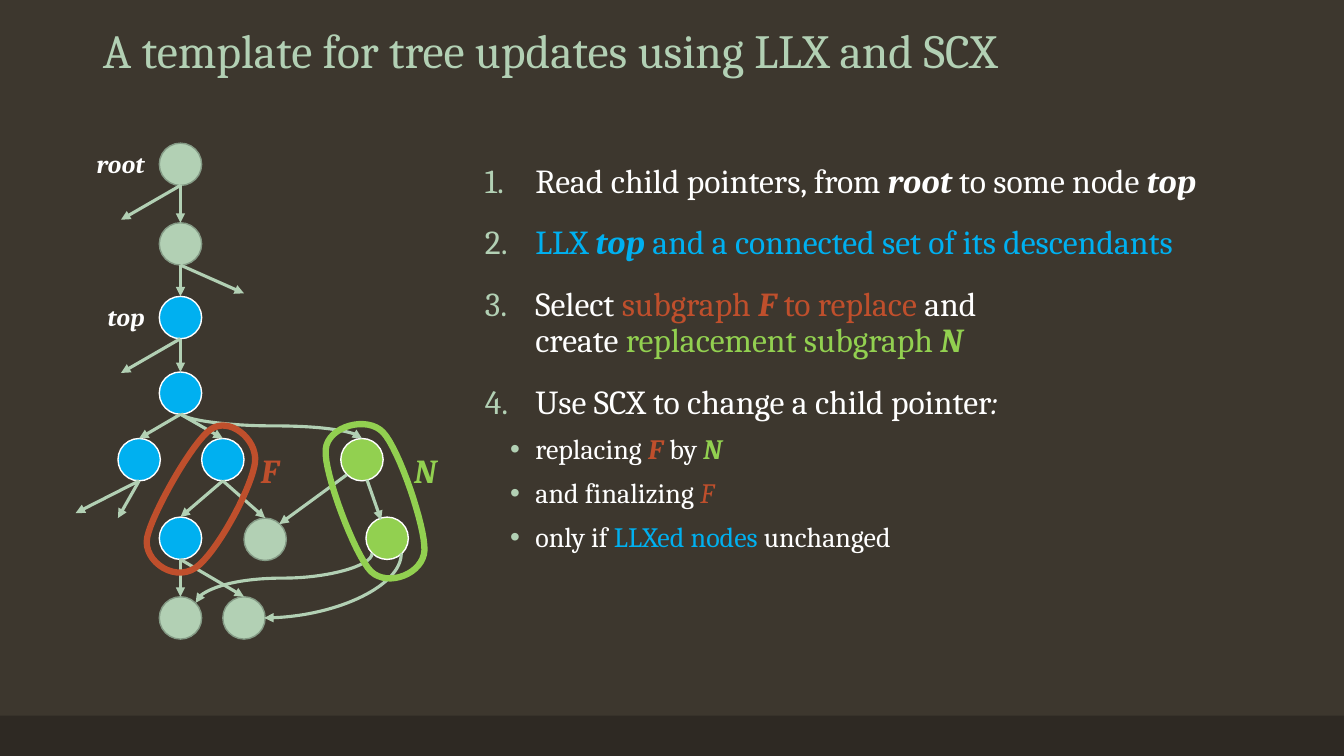
"""Build the slide on tree updates with LLX and SCX."""
from lxml.etree import SubElement as Sub
from pptx import Presentation
from pptx.dml.color import RGBColor as RGB
from pptx.enum.shapes import MSO_CONNECTOR as Link, MSO_SHAPE as Kind
from pptx.enum.text import MSO_ANCHOR as Anchor, MSO_AUTO_SIZE as Fit, PP_ALIGN as Align
from pptx.oxml.ns import qn
from pptx.util import Inches, Pt

BROWN = RGB(0x3D, 0x37, 0x2E)
DARK = RGB(0x2E, 0x29, 0x23)
SAGE = RGB(0xB2, 0xD0, 0xB4)
MOSS = RGB(0x84, 0x9A, 0x85)
WHITE = RGB(0xFF, 0xFF, 0xFF)
BLUE = RGB(0x00, 0xB0, 0xF0)
RUST = RGB(0xBF, 0x4F, 0x2C)
GREEN = RGB(0x92, 0xD0, 0x50)
FONT = "Cambria"
SIZE = 0.42

NODES = {
    "root": (1.79, 1.42, SAGE),
    "inner": (1.79, 2.21, SAGE),
    "top": (1.79, 2.94, BLUE),
    "parent": (1.79, 3.69, BLUE),
    "left": (1.38, 4.35, BLUE),
    "right": (2.21, 4.35, BLUE),
    "low": (1.79, 5.13, BLUE),
    "side": (2.63, 5.14, SAGE),
    "leaf one": (1.79, 5.92, SAGE),
    "leaf two": (2.42, 5.92, SAGE),
    "new": (3.59, 4.35, GREEN),
    "new low": (3.84, 5.13, GREEN),
}
EDGES = [
    ("root", "inner"), ("inner", "top"), ("top", "parent"),
    ("parent", "left"), ("parent", "right"), ("right", "low"),
    ("right", "side"), ("low", "leaf one"), ("low", "leaf two"),
]
STUBS = [
    ("root", 1.2, 2.18), ("inner", 2.42, 2.91), ("top", 1.2, 3.7),
    ("left", 1.17, 5.14), ("left", 0.75, 5.09),
]
CROSS = [(3.64, 4.76, 3.78, 5.16), (3.44, 4.71, 2.77, 5.2)]
BENDS = [
    ((2.57, 4.86, 0.49, 1.75), 90, False, "curvedConnector3"),
    ((2.98, 5.13, 0.64, 1.36), 90, False, "curvedConnector2"),
    ((2.57, 3.33, 0.25, 1.79), 270, True, "curvedConnector3"),
]
LOOP_F = [
    (2.53, 4.58), (2.55, 4.35), (2.27, 4.13), (2.09, 4.26),
    (1.91, 4.38), (1.51, 5.09), (1.46, 5.33),
    (1.41, 5.57), (1.76, 5.81), (1.98, 5.6),
    (2.2, 5.4), (2.51, 4.8), (2.53, 4.58),
]
LOOP_N = [
    (3.23, 4.46), (3.25, 4.23), (3.64, 4.12), (3.8, 4.29),
    (3.96, 4.46), (4.22, 5.23), (4.21, 5.46),
    (4.2, 5.69), (3.85, 5.83), (3.68, 5.67),
    (3.52, 5.51), (3.21, 4.69), (3.23, 4.46),
]
LABELS = [
    ("root", 0.86, 1.42, 0.73, 0.4, 18, WHITE),
    ("top", 0.97, 2.94, 0.61, 0.4, 18, WHITE),
    ("F", 2.49, 4.41, 0.44, 0.5, 24, RUST),
    ("N", 4.01, 4.41, 0.49, 0.5, 24, GREEN),
]
STEPS = [
    [("Read child pointers, from ", WHITE, ""), ("root", WHITE, "bi"),
     (" to some node ", WHITE, ""), ("top", WHITE, "bi")],
    [("LLX ", BLUE, ""), ("top", BLUE, "bi"),
     (" and a connected set of its descendants", BLUE, "")],
    [("Select ", WHITE, ""), ("subgraph ", RUST, ""), ("F", RUST, "bi"),
     (" to replace ", RUST, ""), ("and", WHITE, ""), None, ("create ", WHITE, ""),
     ("replacement subgraph ", GREEN, ""), ("N", GREEN, "bi")],
    [("Use SCX to change a child pointer", WHITE, ""), (":", WHITE, "i")],
]
PARTS = [
    [("replacing ", WHITE, ""), ("F", RUST, "bi"), (" by ", WHITE, ""), ("N", GREEN, "bi")],
    [("and finalizing ", WHITE, ""), ("F", RUST, "i")],
    [("only if ", WHITE, ""), ("LLXed nodes", BLUE, ""), (" unchanged", WHITE, "")],
]


def place(shape, *box):
    """Move and size a shape."""
    shape.left, shape.top, shape.width, shape.height = map(Inches, box)


def write(para, runs, size):
    """Add runs of (text, colour, style); None breaks the line."""
    for item in runs:
        if item is None:
            para.add_line_break()
            continue
        run = para.add_run()
        run.text, color, style = item
        font = run.font
        font.name, font.size = FONT, Pt(size)
        font.bold, font.italic = "b" in style, "i" in style
        font.color.rgb = color


def mark(para, hang, face, tag, **attrs):
    """Give a paragraph its bullet or number."""
    props = para._p.get_or_add_pPr()
    props.set("marL", str(Inches(0.5)))
    props.set("indent", str(-Inches(hang)))
    Sub(Sub(props, qn("a:buClr")), qn("a:srgbClr"), val=str(SAGE))
    Sub(props, qn("a:buFont"), typeface=face)
    Sub(props, qn(tag), **attrs)


def fill_list(frame):
    """Write the numbered steps and their bullets."""
    frame.word_wrap, frame.auto_size = True, Fit.NONE
    rows = [(0, runs) for runs in STEPS] + [(1, runs) for runs in PARTS]
    for i, (level, runs) in enumerate(rows):
        para = frame.add_paragraph() if i else frame.paragraphs[0]
        para.level, para.line_spacing = level, 0.9
        para.space_before, para.space_after = Pt(10 if level else 18), Pt(0)
        if level:
            mark(para, 0.25, "Arial", "a:buChar", char="•")
        else:
            mark(para, 0.5, FONT, "a:buAutoNum", type="arabicPeriod")
        write(para, runs, 20 if level else 24)


def add_node(shapes, mid, top, color):
    """Draw one tree node."""
    node = shapes.add_shape(Kind.OVAL, Inches(mid - SIZE / 2), Inches(top),
                            Inches(SIZE), Inches(SIZE))
    node.shadow.inherit = False
    node.fill.solid()
    node.fill.fore_color.rgb = color
    node.line.color.rgb = MOSS if color == SAGE else WHITE
    node.line.width = Pt(1)
    return node


def add_arrow(shapes, *ends, kind=Link.STRAIGHT):
    """Draw a pointer between two points."""
    wire = shapes.add_connector(kind, *map(Inches, ends))
    wire.line.color.rgb, wire.line.width = SAGE, Pt(2.25)
    props = wire._element.spPr
    Sub(props.find(qn("a:ln")), qn("a:tailEnd"), type="triangle")
    Sub(props, qn("a:effectLst"))
    return wire


def add_bend(shapes, box, turn, flip, preset):
    """Draw a curved pointer, turned inside its box."""
    x, y, wide, high = box
    wire = add_arrow(shapes, x, y, x + wide, y + high, kind=Link.CURVE)
    props = wire._element.spPr
    props.find(qn("a:prstGeom")).set("prst", preset)
    frame = props.find(qn("a:xfrm"))
    frame.set("rot", str(turn * 60000))
    if flip:
        frame.set("flipH", "1")


def add_loop(shapes, knots, color, steps=16):
    """Draw a closed outline through cubic curves."""
    dots = []
    for i in range(0, len(knots) - 1, 3):
        for k in range(steps):
            t = k / steps
            parts = ((1 - t) ** 3, 3 * t * (1 - t) ** 2, 3 * t * t * (1 - t), t ** 3)
            dots.append([Inches(sum(w * p[axis] for w, p in zip(parts, knots[i:i + 4])))
                         for axis in (0, 1)])
    pen = shapes.build_freeform(*dots[0])
    pen.add_line_segments(dots[1:], close=True)
    loop = pen.convert_to_shape()
    loop.shadow.inherit = False
    loop.fill.background()
    loop.line.color.rgb, loop.line.width = color, Pt(4.5)


def add_label(shapes, text, x, y, wide, high, size, color):
    """Name a node or a subgraph."""
    frame = shapes.add_textbox(*map(Inches, (x, y, wide, high))).text_frame
    frame.word_wrap, frame.auto_size = False, Fit.SHAPE_TO_FIT_TEXT
    write(frame.paragraphs[0], [(text, color, "bi")], size)


def add_tree(shapes):
    """Draw the tree with its pointers, outlines and labels."""
    nodes = {name: add_node(shapes, *data) for name, data in NODES.items()}
    for start, end in EDGES:
        (x, y, _), (to_x, to_y, _) = NODES[start], NODES[end]
        add_arrow(shapes, x, y + SIZE, to_x, to_y).end_connect(nodes[end], 0)
    for start, to_x, to_y in STUBS:
        x, y, _ = NODES[start]
        add_arrow(shapes, x, y + SIZE, to_x, to_y)
    for ends in CROSS:
        add_arrow(shapes, *ends)
    for bend in BENDS:
        add_bend(shapes, *bend)
    add_loop(shapes, LOOP_F, RUST)
    add_loop(shapes, LOOP_N, GREEN)
    for label in LABELS:
        add_label(shapes, *label)


def main():
    """Build and save the slide."""
    deck = Presentation()
    deck.slide_width, deck.slide_height = Inches(13.33), Inches(7.5)
    slide = deck.slides.add_slide(deck.slide_layouts[1])
    slide.background.fill.solid()
    slide.background.fill.fore_color.rgb = BROWN
    shapes = slide.shapes
    band = shapes.add_shape(Kind.RECTANGLE, *map(Inches, (0, 7.1, 13.33, 0.4)))
    band.shadow.inherit = False
    band.fill.solid()
    band.fill.fore_color.rgb = DARK
    band.line.fill.background()
    title, body = slide.placeholders
    place(title, 0.92, 0.06, 11.5, 0.77)
    place(body, 4.71, 1.58, 8.21, 4.76)
    frame = title.text_frame
    frame.vertical_anchor, frame.auto_size = Anchor.BOTTOM, Fit.NONE
    para = frame.paragraphs[0]
    para.alignment, para.line_spacing = Align.LEFT, 0.9
    write(para, [("A template for tree updates using LLX and SCX", SAGE, "")], 34)
    fill_list(body.text_frame)
    add_tree(shapes)
    deck.save("out.pptx")


if __name__ == "__main__":
    main()
